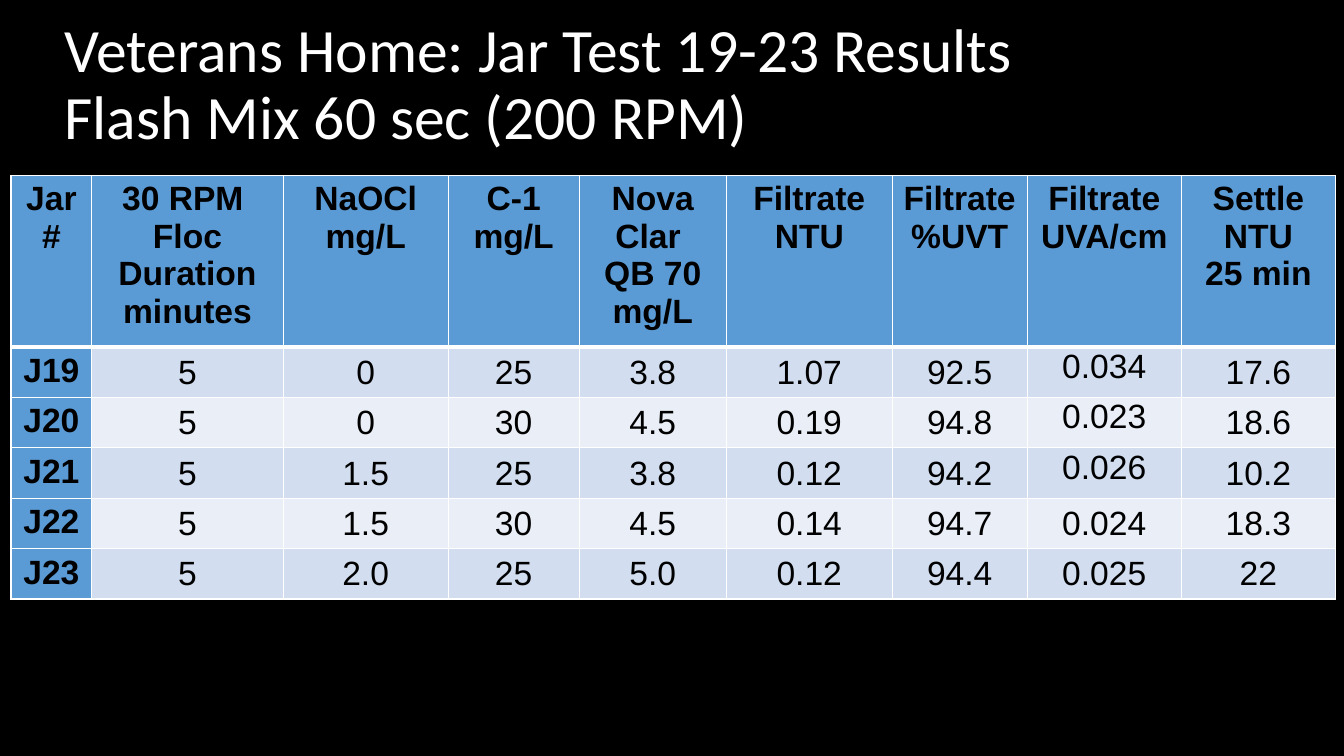
from dataclasses import dataclass

from lxml import etree
from pptx import Presentation
from pptx.dml.color import RGBColor
from pptx.enum.text import MSO_ANCHOR, PP_ALIGN
from pptx.oxml.ns import qn
from pptx.util import Pt

CENTER = PP_ALIGN.CENTER
LEFT = PP_ALIGN.LEFT
TOP = MSO_ANCHOR.TOP
MIDDLE = MSO_ANCHOR.MIDDLE

COLORS = {
    "background": "000000",
    "title": "FFFFFF",
    "border": "FFFFFF",
    "text": "000000",
    "header": "5B9BD5",
    "band_dark": "D2DEEF",
    "band_light": "EAEFF7",
}

TITLE_LINES = ["Veterans Home: Jar Test 19-23 Results", "Flash Mix 60 sec (200 RPM)"]
HEADER_HEIGHT = 39.6  # minimum heights; rows grow to fit their text
ROW_HEIGHT = 29.5
TIGHT_MARGIN = 0.7


@dataclass
class Column:
    width: float
    heading: list[str]
    values: list[str]
    top_rows: int = 0  # leading body rows whose text sits at the top


COLUMNS = [
    Column(57.6, ["Jar", "#"], ["J19", "J20", "J21", "J22", "J23"], top_rows=5),
    Column(136.8, ["30 RPM ", "Floc", "Duration", "minutes"], ["5"] * 5),
    Column(117.8, ["NaOCl", "mg/L"], ["0", "0", "1.5", "1.5", "2.0"]),
    Column(93.6, ["C-1", "mg/L"], ["25", "30", "25", "30", "25"]),
    Column(105.1, ["Nova Clar ", "QB 70", "mg/L"], ["3.8", "4.5", "3.8", "4.5", "5.0"]),
    Column(118.6, ["Filtrate", "NTU"], ["1.07", "0.19", "0.12", "0.14", "0.12"]),
    Column(96.4, ["Filtrate", "%UVT"], ["92.5", "94.8", "94.2", "94.7", "94.4"]),
    Column(110.1, ["Filtrate", "UVA/cm"],
           ["0.034", "0.023", "0.026", "0.024", "0.025"], top_rows=3),
    Column(110.1, ["Settle", "NTU", "25 min"], ["17.6", "18.6", "10.2", "18.3", "22"]),
]


def add_run(p, text: str, font: str, size: float, color: str, bold: bool = False) -> None:
    r = p.add_run()
    r.text = text
    r.font.name = font
    r.font.size = Pt(size)
    r.font.bold = bold
    r.font.color.rgb = RGBColor.from_string(COLORS[color])


def set_borders(cell, top: float, bottom: float) -> None:
    tc_pr = cell._tc.get_or_add_tcPr()
    for side, width in (("L", 1), ("R", 1), ("T", top), ("B", bottom)):
        ln = etree.SubElement(tc_pr, qn(f"a:ln{side}"), w=str(Pt(width)))
        fill = etree.SubElement(ln, qn("a:solidFill"))
        etree.SubElement(fill, qn("a:srgbClr"), val=COLORS["border"])


def fill_cell(cell, lines: list[str], color: str, bold: bool, anchor) -> None:
    cell.fill.solid()
    cell.fill.fore_color.rgb = RGBColor.from_string(COLORS[color])
    cell.vertical_anchor = anchor
    tf = cell.text_frame
    for i, line in enumerate(lines):
        p = tf.add_paragraph() if i else tf.paragraphs[0]
        p.alignment = CENTER
        add_run(p, line, "Arial", 24, "text", bold)


def add_title(s) -> None:
    sp = s.shapes.add_textbox(Pt(38.9), Pt(9.4), Pt(855.4), Pt(104.4))
    tf = sp.text_frame
    tf.word_wrap = True
    tf.vertical_anchor = MIDDLE
    p = tf.paragraphs[0]
    p.alignment = LEFT
    p.line_spacing = 0.9
    for i, line in enumerate(TITLE_LINES):
        if i:
            p.add_line_break()
        add_run(p, line, "Calibri", 44, "title")


def add_results(s) -> None:
    count = len(COLUMNS[0].values)
    width = sum(col.width for col in COLUMNS)
    height = HEADER_HEIGHT + count * ROW_HEIGHT
    table = s.shapes.add_table(count + 1, len(COLUMNS), Pt(7.9), Pt(125.3),
                               Pt(width), Pt(height)).table
    for i, row in enumerate(table.rows):
        row.height = Pt(ROW_HEIGHT if i else HEADER_HEIGHT)

    for c, col in enumerate(COLUMNS):
        table.columns[c].width = Pt(col.width)

        # Heading
        cell = table.cell(0, c)
        set_borders(cell, 1, 3)
        fill_cell(cell, col.heading, "header", True, TOP)

        # Jar names and measurements
        for i, value in enumerate(col.values):
            cell = table.cell(i + 1, c)
            set_borders(cell, 1 if i else 3, 1)
            is_label = c == 0
            band = "band_light" if i % 2 else "band_dark"
            fill_cell(cell, [value], "header" if is_label else band, is_label,
                      TOP if i < col.top_rows else MIDDLE)
            if not is_label:
                cell.margin_left = cell.margin_right = cell.margin_top = Pt(TIGHT_MARGIN)
                cell.margin_bottom = Pt(0)


def main() -> None:
    prs = Presentation()
    prs.slide_width = Pt(960)
    prs.slide_height = Pt(540)
    s = prs.slides.add_slide(prs.slide_layouts[6])
    s.background.fill.solid()
    s.background.fill.fore_color.rgb = RGBColor.from_string(COLORS["background"])
    add_title(s)
    add_results(s)
    prs.save("out.pptx")


if __name__ == "__main__":
    main()
